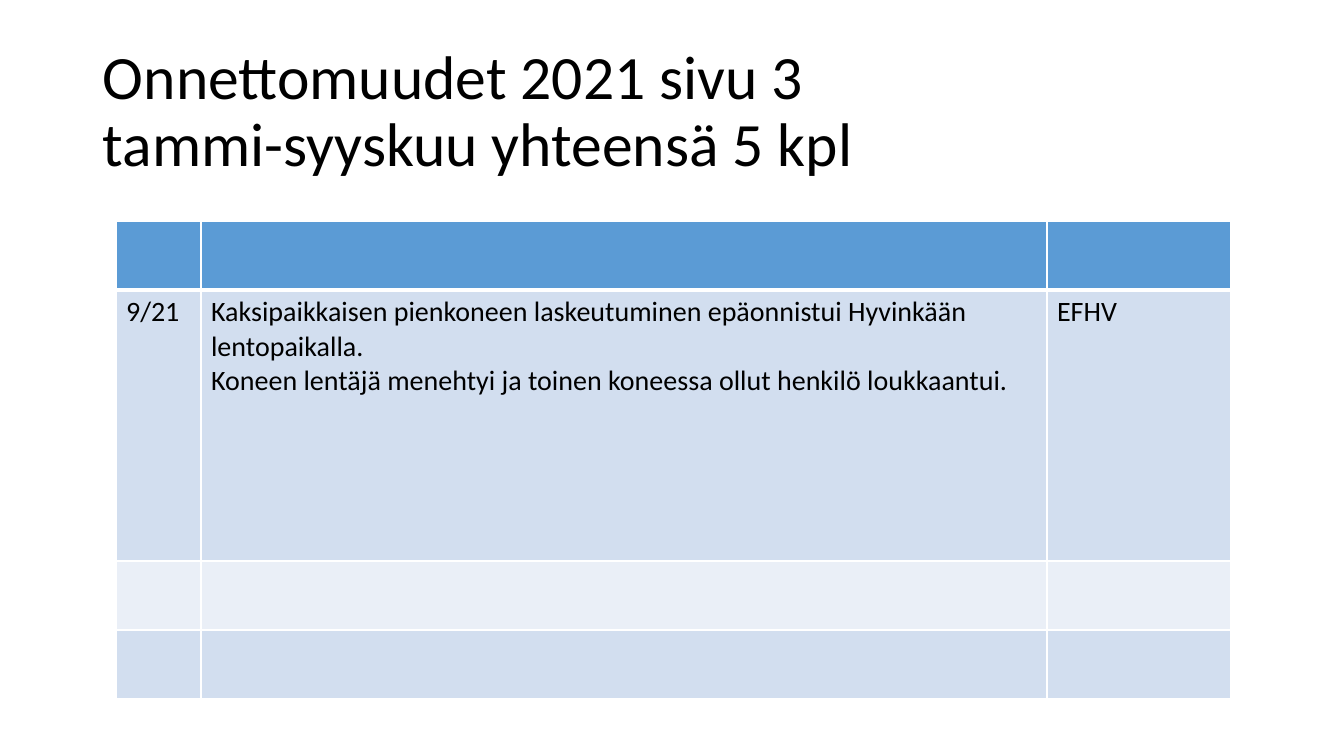
from dataclasses import dataclass

from lxml.etree import SubElement
from pptx import Presentation
from pptx.dml.color import RGBColor
from pptx.enum.text import MSO_ANCHOR as Anchor
from pptx.oxml.ns import qn
from pptx.util import Pt

EMU_PER_PX = 914400 / 100.8


def px(length):
    return round(length * EMU_PER_PX)


@dataclass(frozen=True)
class Theme:
    font: str = "Calibri"
    title_size: int = 44
    body_size: int = 20
    ink: str = "000000"
    rule: str = "FFFFFF"
    header: str = "5B9BD5"
    bands: tuple = ("D2DEEF", "EAEFF7")
    thin: int = 1
    thick: int = 3


class SlideBuilder:
    def __init__(self, deck, theme):
        self.theme = theme
        self.slide = deck.slides.add_slide(deck.slide_layouts[6])

    def set_text(self, frame, text, size):
        frame.text = text
        for paragraph in frame.paragraphs:
            font_format = {"name": self.theme.font, "size": Pt(size), "bold": False}
            for name, value in font_format.items():
                setattr(paragraph.font, name, value)
            paragraph.font.color.rgb = RGBColor.from_string(self.theme.ink)

    def title(self, text, left, top, width, height):
        box = self.slide.shapes.add_textbox(*map(px, (left, top, width, height)))
        frame = box.text_frame
        frame_format = {"word_wrap": True, "vertical_anchor": Anchor.MIDDLE}
        for name, value in frame_format.items():
            setattr(frame, name, value)
        self.set_text(frame, text, self.theme.title_size)
        frame.paragraphs[0].line_spacing = 0.9

    def borders(self, cell, **widths):
        """Draw the cell's sides; widths in points, keyed L, R, T, B."""
        properties = cell._tc.get_or_add_tcPr()
        for position, (side, width) in enumerate(widths.items()):
            line = SubElement(properties, qn(f"a:ln{side}"), w=str(Pt(width)))
            fill = SubElement(line, qn("a:solidFill"))
            SubElement(fill, qn("a:srgbClr"), val=self.theme.rule)
            properties.insert(position, line)

    def table(self, rows, left, top, widths, heights):
        theme = self.theme
        table = self.slide.shapes.add_table(
            len(heights), len(widths),
            *map(px, (left, top, sum(widths), sum(heights)))).table
        for column, width in zip(table.columns, widths):
            column.width = px(width)
        for index, (row, height) in enumerate(zip(table.rows, heights)):
            row.height = px(height)
            color = theme.bands[(index - 1) % 2] if index else theme.header
            for cell, text in zip(row.cells, rows[index]):
                if text:
                    self.set_text(cell.text_frame, text, theme.body_size)
                cell.fill.solid()
                cell.fill.fore_color.rgb = RGBColor.from_string(color)
                self.borders(cell, L=theme.thin, R=theme.thin,
                             T=theme.thick if index == 1 else theme.thin,
                             B=theme.thick if index == 0 else theme.thin)


def main():
    deck = Presentation()
    deck.slide_width, deck.slide_height = px(1344), px(756)
    builder = SlideBuilder(deck, Theme())
    builder.title("Onnettomuudet 2021 sivu 3\vtammi-syyskuu yhteensä 5 kpl",
                  93, 40, 1159, 146)
    empty = ("", "", "")
    accident = (
        "9/21",
        "Kaksipaikkaisen pienkoneen laskeutuminen epäonnistui Hyvinkään lentopaikalla.\n"
        "Koneen lentäjä menehtyi ja toinen koneessa ollut henkilö loukkaantui.",
        "EFHV",
    )
    builder.table([empty, accident, empty, empty], left=116, top=221,
                  widths=(85, 846, 184), heights=(69, 271, 69, 69))
    deck.save("out.pptx")


if __name__ == "__main__":
    main()
